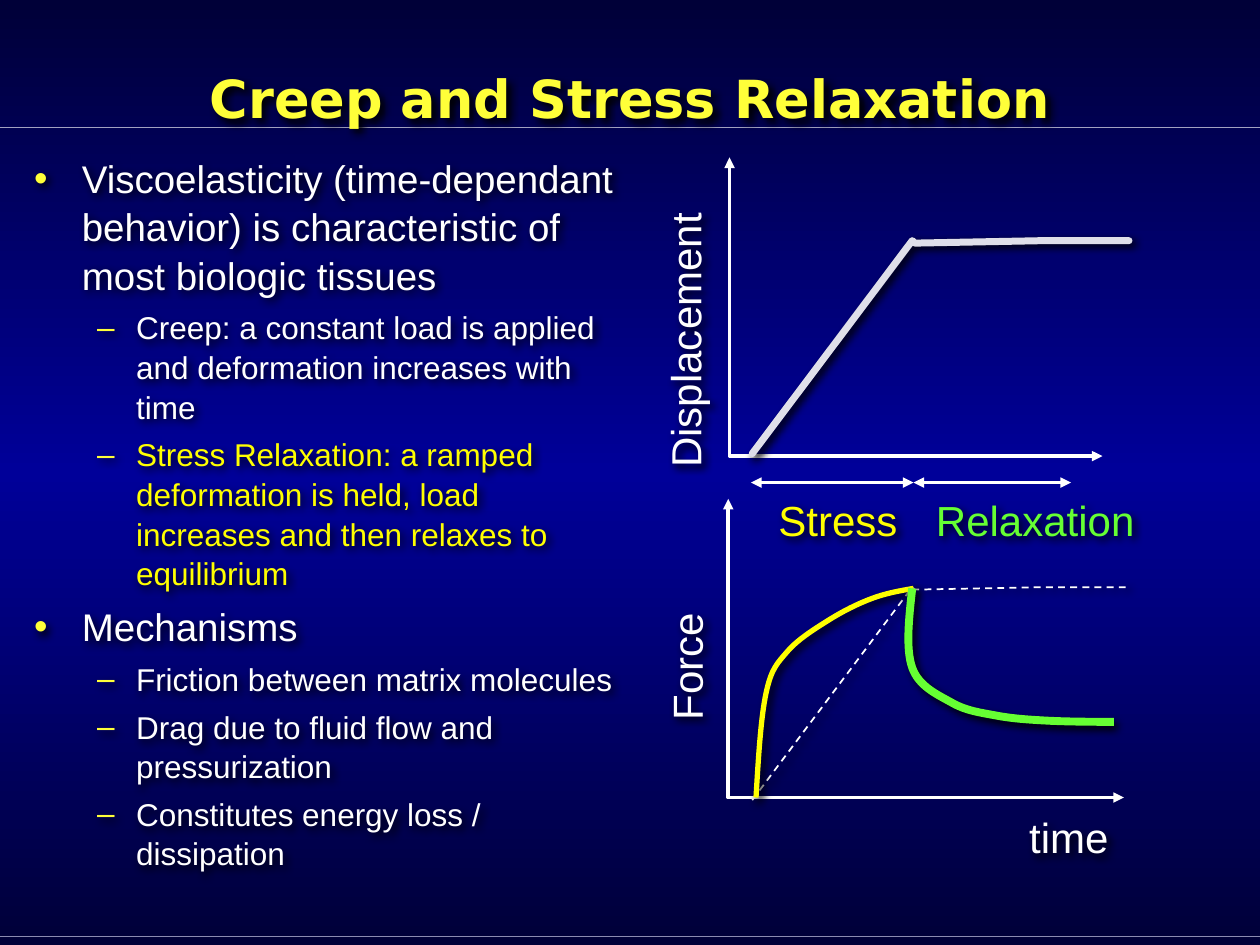
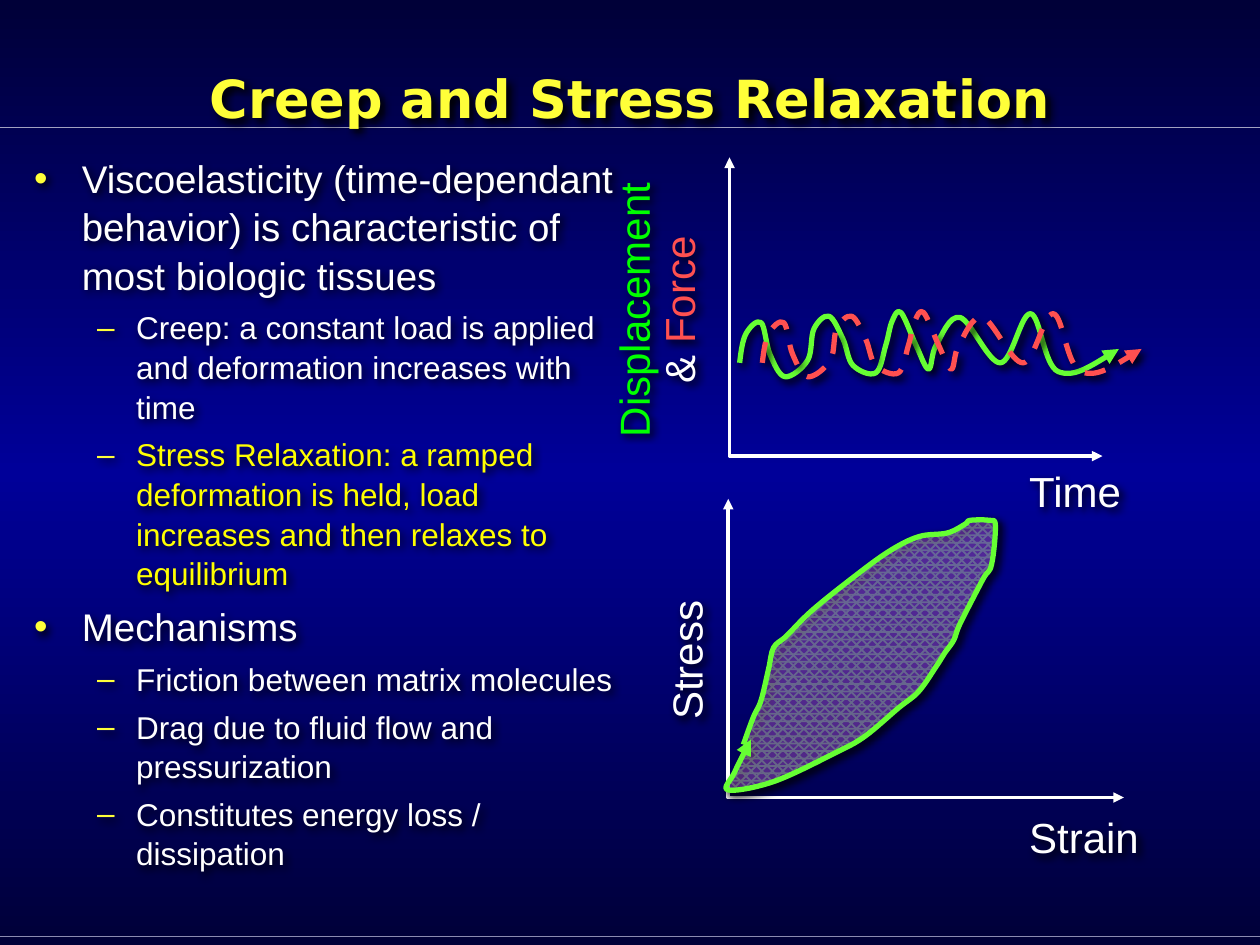
from lxml.etree import SubElement
from pptx import Presentation
from pptx.dml.color import RGBColor
from pptx.enum.dml import MSO_LINE, MSO_PATTERN
from pptx.enum.shapes import MSO_CONNECTOR
from pptx.enum.text import MSO_ANCHOR, MSO_AUTO_SIZE, PP_ALIGN
from pptx.oxml.ns import qn
from pptx.util import Inches, Pt

WHITE, YELLOW, GOLD = "FFFFFF", "FFFF00", "FFFF39"
LIME, GREEN, RED = "66FF33", "00FF00", "FF5050"
NIGHT, BLUE, SILVER = "000038", "000099", "DFDFE9"

TITLE = "Creep and Stress Relaxation"
POINTS = [
    (0, "Viscoelasticity (time-dependant behavior) is characteristic of most biologic tissues", WHITE),
    (1, "Creep: a constant load is applied and deformation increases with time", WHITE),
    (1, "Stress Relaxation: a ramped deformation is held, load increases and then relaxes to equilibrium", YELLOW),
    (0, "Mechanisms", WHITE),
    (1, "Friction between matrix molecules", WHITE),
    (1, "Drag due to fluid flow and pressurization", WHITE),
    (1, "Constitutes energy loss / dissipation", WHITE),
]
# Per list level: size, left margin, hanging indent, bullet
LEVELS = [(22, 0.38, 0.38, "•"), (18, 0.81, 0.31, "–")]

RAMP = [(5.97, 3.6), (7.24, 1.91), (7.26, 1.93), (8.28, 1.91), (8.96, 1.91)]
LOAD = [(6, 6.33), (6.08, 5.5), (6.25, 5.17), (6.58, 4.92), (6.92, 4.75), (7.25, 4.67)]
DECAY = [(7.24, 4.67), (7.24, 5.3), (7.56, 5.58), (7.91, 5.68), (8.31, 5.72), (8.84, 5.73)]
WAVE = [
    (5.87, 2.88), (5.92, 2.65), (6.04, 2.56), (6.11, 2.81), (6.23, 2.99),
    (6.41, 2.86), (6.46, 2.61), (6.58, 2.51), (6.69, 2.69), (6.77, 2.9),
    (6.95, 2.96), (7.03, 2.74), (7.08, 2.55), (7.15, 2.48), (7.27, 2.74),
    (7.37, 2.93), (7.43, 2.74), (7.62, 2.52), (7.94, 2.88), (8.18, 2.49),
    (8.4, 2.95), (8.88, 2.77),
]
LOOP = [
    (5.9, 5.91), (5.98, 5.69), (6.04, 5.56), (6.1, 5.31), (6.14, 5.14),
    (6.24, 5.05), (6.44, 4.85), (6.75, 4.6), (7.05, 4.38), (7.29, 4.26),
    (7.52, 4.23), (7.66, 4.16), (7.7, 4.13), (7.85, 4.13), (7.9, 4.17),
    (7.87, 4.48), (7.8, 4.6), (7.62, 4.95), (7.57, 5.08), (7.5, 5.18),
    (7.43, 5.29), (7.29, 5.49), (7.13, 5.62), (6.87, 5.84), (6.66, 5.96),
    (6.15, 6.2), (5.78, 6.27), (5.83, 6.13), (5.96, 5.87),
]


def paint(text):
    return RGBColor.from_string(text)


def add(parent, tag, **attrs):
    return SubElement(parent, qn(tag), {k: str(v) for k, v in attrs.items()})


def write(para, text, size=24, color=WHITE, font="Arial", bold=False):
    run = para.add_run()
    run.text = text
    run.font.size, run.font.name, run.font.bold = Pt(size), font, bold
    run.font.color.rgb = paint(color)


def shade(shape, on=True):
    """Give the shape a soft black shadow, or an empty effect list."""
    effects = add(shape._element.spPr, "a:effectLst")
    if on:
        drop = add(effects, "a:outerShdw", blurRad=Pt(5), dist=Pt(2.8),
                   dir=45 * 60000, algn="ctr", rotWithShape=0)
        add(drop, "a:srgbClr", val="000000")


def stroke(line, color, width, dash=False, ends=(), cap="flat"):
    line.color.rgb, line.width = paint(color), Pt(width)
    if dash:
        line.dash_style = MSO_LINE.DASH
    node = line._get_or_add_ln()
    node.set("cap", cap)
    add(node, "a:round")
    for end in ends:
        add(node, f"a:{end}End", type="triangle")


def bend(shape):
    """Turn a polyline into a Catmull-Rom curve through the same knots."""
    segs = shape._element.xpath(".//a:lnTo")
    pts = [(int(p.get("x")), int(p.get("y")))
           for p in shape._element.xpath(".//a:moveTo/a:pt | .//a:lnTo/a:pt")]
    slopes = [tuple((b - a) / 6 for a, b in zip(p, q)) for p, q in zip(pts, pts[2:])]
    before = [tuple(a - d for a, d in zip(p, s)) for p, s in zip(pts[1:], slopes)]
    after = [tuple(a + d for a, d in zip(p, s)) for p, s in zip(pts[1:], slopes)]

    def middle(p, q):
        return tuple((a + b) / 2 for a, b in zip(p, q))

    outs = [middle(pts[0], before[0])] + after
    ins = before + [middle(after[-1], pts[-1])]
    for seg, *trio in zip(segs, outs, ins, pts[1:]):
        seg.tag = qn("a:cubicBezTo")
        seg.remove(seg[0])
        for x, y in trio:
            add(seg, "a:pt", x=round(x), y=round(y))


class Deck:
    def __init__(self):
        self.prs = Presentation()
        self.prs.slide_width, self.prs.slide_height = Inches(10), Inches(7.5)
        self.slide = None
        self.back()

    def back(self):
        fill = self.prs.slide_master.background.fill
        fill.gradient()
        fill.gradient_angle = 90
        stops = fill._fill._gradFill.find(qn("a:gsLst"))
        for stop in list(stops):
            stops.remove(stop)
        for pos, color in ((0, NIGHT), (50, BLUE), (100, NIGHT)):
            add(add(stops, "a:gs", pos=pos * 1000), "a:srgbClr", val=color)

    def rules(self):
        """Draw the two thin rules and move them to the master."""
        for y, color in ((7.43, "8B8BB1"), (1.01, "A2A2C0")):
            rule = self.line((0, y), (10, y), color, 0.75)
            self.prs.slide_master.shapes._spTree.append(rule._element)

    def page(self):
        """Start a slide with the title, the list and both pairs of axes."""
        self.slide = self.prs.slides.add_slide(self.prs.slide_layouts[1])
        if len(self.prs.slides) == 1:
            self.rules()
        self.title()
        self.list()
        self.axes((5.79, 1.25), (8.75, 3.62))
        self.axes((5.78, 3.96), (8.92, 6.33))

    def place(self, shape, left, top, width, height):
        shape.left, shape.top = Inches(left), Inches(top)
        shape.width, shape.height = Inches(width), Inches(height)
        frame = shape.text_frame
        frame.auto_size, frame.word_wrap = MSO_AUTO_SIZE.NONE, True
        shade(shape)
        return frame

    def title(self):
        frame = self.place(self.slide.shapes.title, 0.5, 0.15, 9, 1.25)
        frame.vertical_anchor = MSO_ANCHOR.MIDDLE
        para = frame.paragraphs[0]
        para.alignment = PP_ALIGN.CENTER
        write(para, TITLE, size=30, color=GOLD, font="DejaVu Sans", bold=True)

    def list(self):
        frame = self.place(self.slide.placeholders[1], 0.17, 1.16, 4.82, 5.88)
        frame.vertical_anchor = MSO_ANCHOR.TOP
        for i, (level, text, color) in enumerate(POINTS):
            para = frame.add_paragraph() if i else frame.paragraphs[0]
            size, left, hang, mark = LEVELS[level]
            para.level, para.line_spacing = level, 1.05
            para.space_before = Pt(size * 0.15 if i else 0)
            para.space_after = Pt(size * 0.1)
            props = para._p.get_or_add_pPr()
            props.set("marL", str(Inches(left)))
            props.set("indent", str(-Inches(hang)))
            add(add(props, "a:buClr"), "a:srgbClr", val=GOLD)
            add(props, "a:buChar", char=mark)
            write(para, text, size=size, color=color)

    def label(self, runs, left, top, width, height=0.46, turn=0, wrap=False):
        box = self.slide.shapes.add_textbox(0, 0, 0, 0)
        frame = self.place(box, left, top, width, height)
        frame.word_wrap, box.rotation = wrap, turn
        para = frame.paragraphs[0]
        para.line_spacing = 0.9
        if wrap:
            para.alignment = PP_ALIGN.CENTER
        for text, color in runs:
            write(para, text, color=color)

    def upright(self, runs, x, y, width, **style):
        """Label that reads upward, centred on x, y."""
        height = style.get("height", 0.46)
        self.label(runs, x - width / 2, y - height / 2, width, turn=270, **style)

    def line(self, start, end, color, width, ends=()):
        line = self.slide.shapes.add_connector(
            MSO_CONNECTOR.STRAIGHT, *map(Inches, start + end))
        stroke(line.line, color, width, ends=ends)
        shade(line, False)
        return line

    def curve(self, knots, color, width, smooth=True, shadow=True, **style):
        pts = [(Inches(x), Inches(y)) for x, y in knots]
        pen = self.slide.shapes.build_freeform(*pts[0])
        pen.add_line_segments(pts[1:], close=False)
        shape = pen.convert_to_shape()
        if smooth:
            bend(shape)
        shape.fill.background()
        stroke(shape.line, color, width, **style)
        shade(shape, shadow)
        return shape

    def axes(self, top, end):
        self.curve([top, (top[0], end[1]), end], WHITE, 2, smooth=False,
                   shadow=False, ends=("head", "tail"))

    def hatch(self, shape, fore, back):
        shape.fill.patterned()
        shape.fill.pattern = MSO_PATTERN.PERCENT_60
        shape.fill.fore_color.rgb, shape.fill.back_color.rgb = paint(fore), paint(back)
        for color in shape._element.xpath("./p:spPr/a:pattFill//a:srgbClr"):
            add(color, "a:alpha", val=40000)


def relax(deck):
    deck.page()
    ghost = [(x, y + 2.75) for x, y in RAMP]
    deck.curve(ghost, WHITE, 1, smooth=False, dash=True)
    deck.curve(RAMP, SILVER, 4, smooth=False, cap="rnd")
    deck.upright([("Displacement", WHITE)], 5.46, 2.7, 2.22)
    deck.upright([("Force", WHITE)], 5.47, 5.29, 1.05)
    deck.label([("time", WHITE)], 8.07, 6.44, 0.83)
    deck.label([("Stress", YELLOW)], 6.08, 3.92, 1.14)
    deck.label([("Relaxation", LIME)], 7.33, 3.92, 1.78)
    for x in (5.96, 8.5):
        deck.line((7.25, 3.83), (x, 3.83), WHITE, 2, ends=("head", "tail"))
    deck.curve(LOAD, YELLOW, 3)
    deck.curve(DECAY, LIME, 4.5)


def cycle(deck):
    deck.page()
    deck.upright([("Displacement", GREEN), (" & ", WHITE), ("Force", RED)],
                 5.28, 2.46, 2.3, height=0.92, wrap=True)
    deck.upright([("Stress", WHITE)], 5.47, 5.24, 1.14)
    deck.label([("Strain", WHITE)], 8.07, 6.44, 1.07)
    deck.label([("Time", WHITE)], 8.07, 3.69, 0.94)
    deck.curve(WAVE, LIME, 3, ends=("tail",))
    lag = [(x + 0.18, y) for x, y in WAVE]
    deck.curve(lag, RED, 3, dash=True, ends=("tail",))
    loop = deck.curve(LOOP, LIME, 3, ends=("tail",))
    deck.hatch(loop, WHITE, "CC66FF")


def main():
    deck = Deck()
    relax(deck)
    cycle(deck)
    deck.prs.save("out.pptx")


if __name__ == "__main__":
    main()
